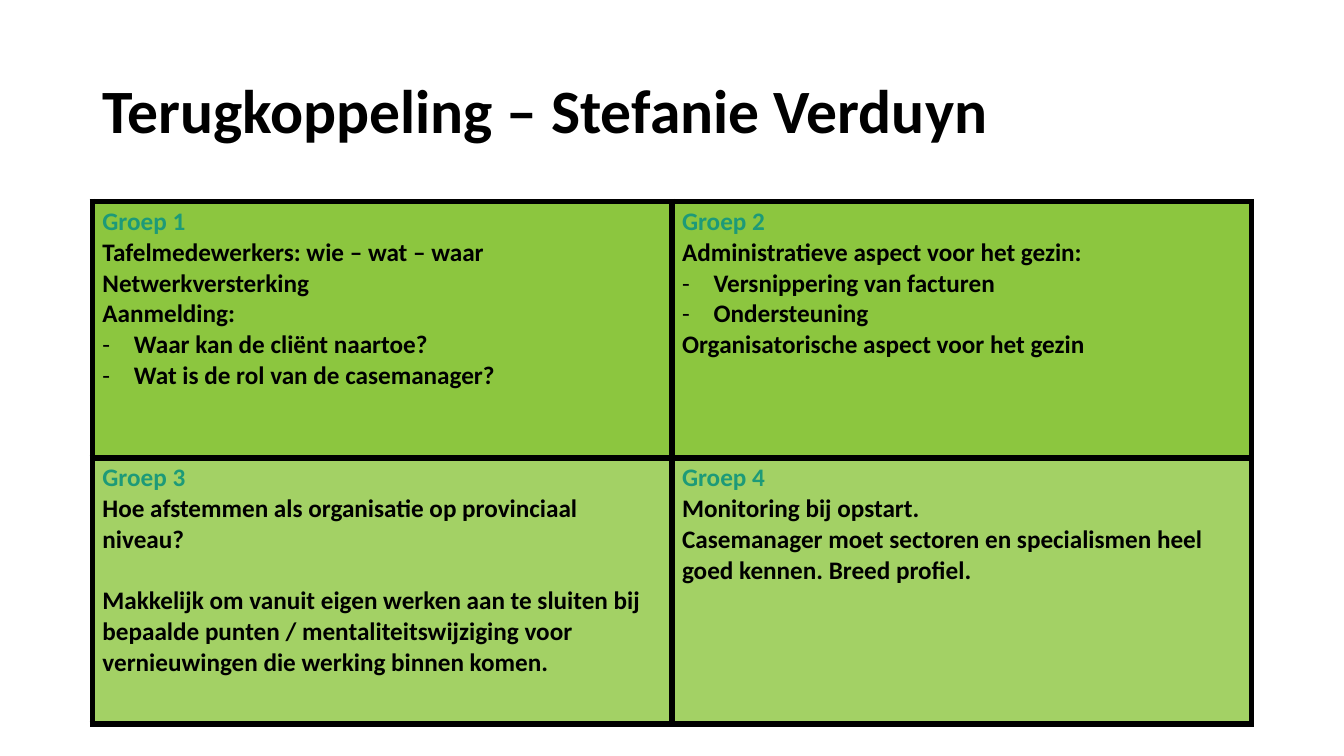
"""Builds a feedback slide with a title and a two by two table of groups."""
from dataclasses import dataclass

from lxml import etree
from pptx import Presentation
from pptx import util as u
from pptx.dml.color import RGBColor
from pptx.enum import text as t
from pptx.oxml import ns

HUES = {"ink": "000000", "teal": "1D9A78", "green": "8CC63F", "light": "A3D165"}
LEFT, WIDTH = 66, 828
DENT = 22.5


@dataclass
class Line:
    text: str
    dash: bool = False
    gap: float = 0


@dataclass
class Group:
    name: str
    lines: list[Line]


@dataclass
class Row:
    high: float
    fill: str
    groups: list[Group]


ROWS = [
    Row(183, "green", [
        Group("Groep 1", [
            Line("Tafelmedewerkers: wie – wat – waar"),
            Line("Netwerkversterking"),
            Line("Aanmelding:"),
            Line("Waar kan de cliënt naartoe?", dash=True),
            Line("Wat is de rol van de casemanager?", dash=True),
        ]),
        Group("Groep 2", [
            Line("Administratieve aspect voor het gezin:"),
            Line("Versnippering van facturen", dash=True),
            Line("Ondersteuning", dash=True),
            Line("Organisatorische aspect voor het gezin"),
        ]),
    ]),
    Row(190, "light", [
        Group("Groep 3", [
            Line("Hoe afstemmen als organisatie op provinciaal niveau?"),
            Line("Makkelijk om vanuit eigen werken aan te sluiten bij bepaalde punten / "
                 "mentaliteitswijziging voor vernieuwingen die werking binnen komen.", gap=22),
        ]),
        Group("Groep 4", [
            Line("Monitoring bij opstart."),
            Line("Casemanager moet sectoren en specialismen heel goed kennen. Breed profiel."),
        ]),
    ]),
]


def tint(name: str) -> RGBColor:
    return RGBColor.from_string(HUES[name])


def node(base, tag: str, **keys: str):
    return etree.SubElement(base, ns.qn(tag), keys)


def write(par, words: str, *, size: float = 18, hue: str = "ink", dash: bool = False,
          gap: float = 0, lead: float = 1) -> None:
    par.line_spacing = lead
    par.space_before = u.Pt(gap)
    run = par.add_run()
    run.text = words
    font = run.font
    font.name, font.size, font.bold = "Calibri", u.Pt(size), True
    font.color.rgb = tint(hue)
    if dash:
        props = par._p.get_or_add_pPr()
        props.set("marL", str(u.Pt(DENT)))
        props.set("indent", str(u.Pt(-DENT)))
        node(props, "a:buFont", typeface="Calibri")
        node(props, "a:buChar", char="-")


def frame(cell, wide: float) -> None:
    props = cell._tc.get_or_add_tcPr()
    for side in ("a:lnL", "a:lnR", "a:lnT", "a:lnB"):
        edge = node(props, side, w=str(u.Pt(wide)))
        node(node(edge, "a:solidFill"), "a:srgbClr", val=HUES["ink"])


def fill(cell, group: Group, hue: str) -> None:
    frame(cell, 4.5)
    cell.fill.solid()
    cell.fill.fore_color.rgb = tint(hue)
    body = cell.text_frame
    write(body.paragraphs[0], group.name, hue="teal")
    for line in group.lines:
        write(body.add_paragraph(), line.text, dash=line.dash, gap=line.gap)


def head(slide, words: str) -> None:
    box = slide.shapes.add_textbox(u.Pt(LEFT), u.Pt(28.75), u.Pt(WIDTH), u.Pt(104.4))
    body = box.text_frame
    body.word_wrap = True
    body.vertical_anchor = t.MSO_ANCHOR.MIDDLE
    write(body.paragraphs[0], words, size=44, lead=0.9)


def grid(slide, rows: list[Row]) -> None:
    count = len(rows[0].groups)
    high = sum(row.high for row in rows)
    table = slide.shapes.add_table(len(rows), count, u.Pt(LEFT), u.Pt(144),
                                   u.Pt(WIDTH), u.Pt(high)).table
    table.first_row = table.horz_banding = False
    for y, row in enumerate(rows):
        table.rows[y].height = u.Pt(row.high)
        for x, group in enumerate(row.groups):
            fill(table.cell(y, x), group, row.fill)


def main() -> None:
    deck = Presentation()
    deck.slide_width, deck.slide_height = u.Pt(960), u.Pt(540)
    slide = deck.slides.add_slide(deck.slide_layouts[6])
    head(slide, "Terugkoppeling – Stefanie Verduyn")
    grid(slide, ROWS)
    deck.save("out.pptx")


if __name__ == "__main__":
    main()
